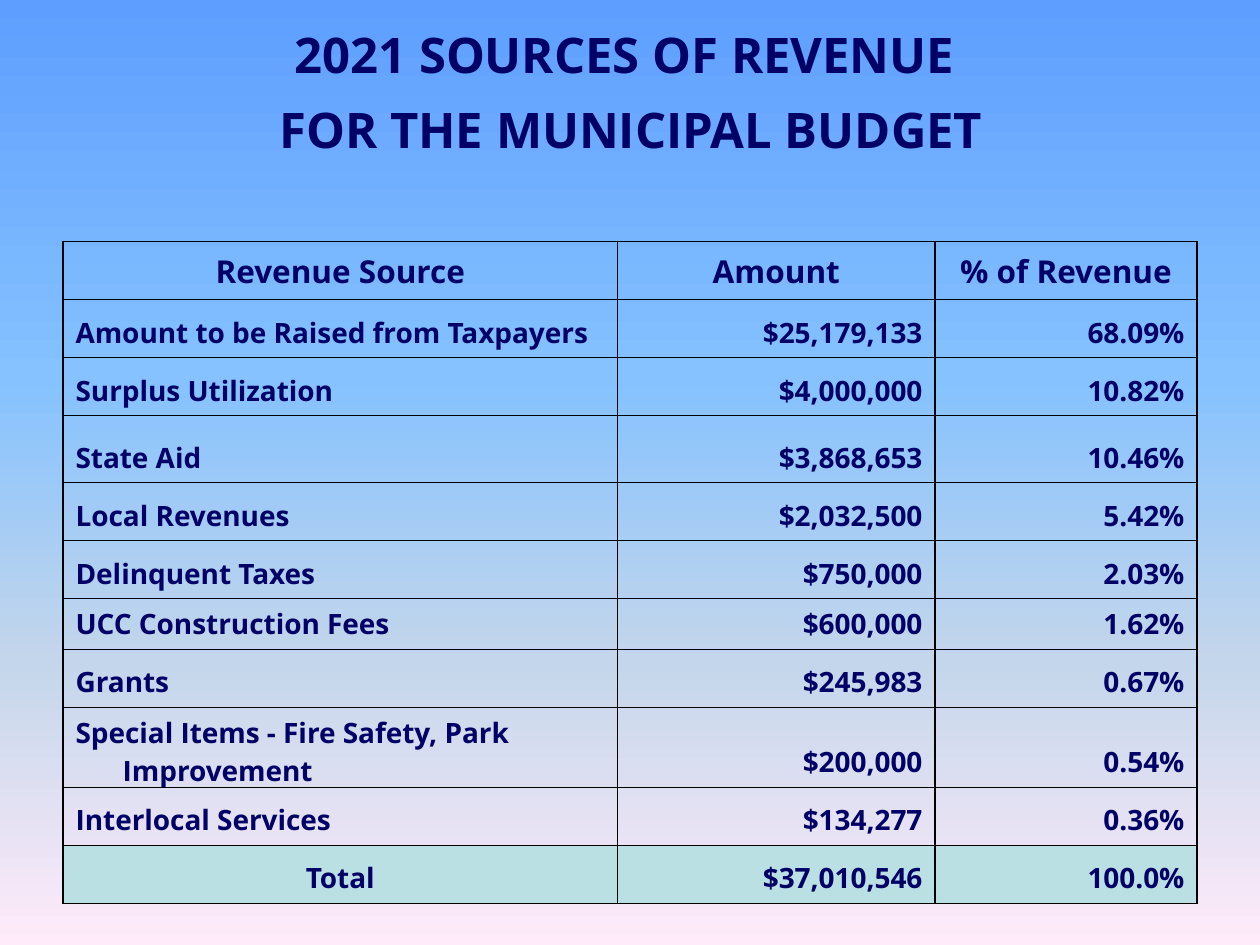
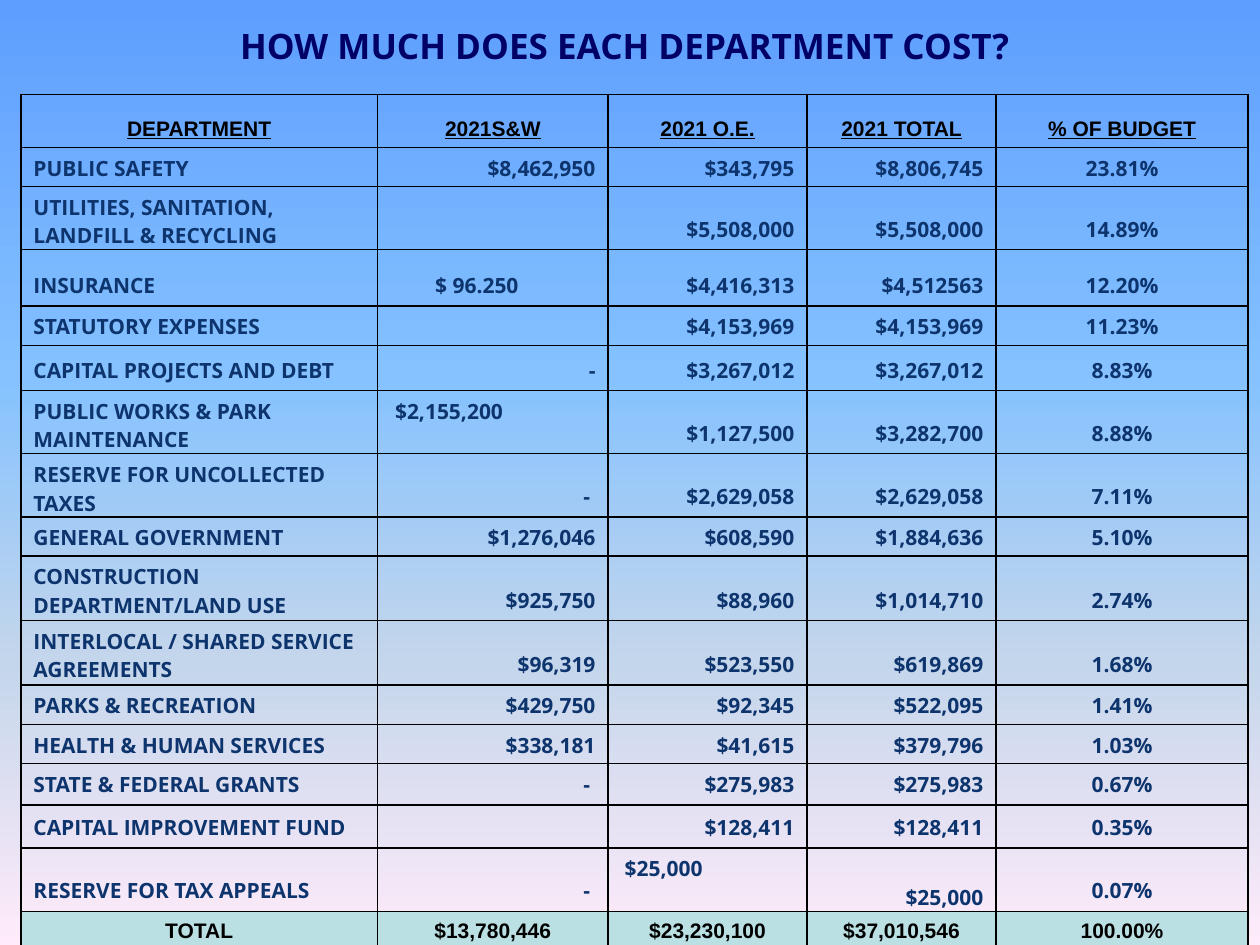
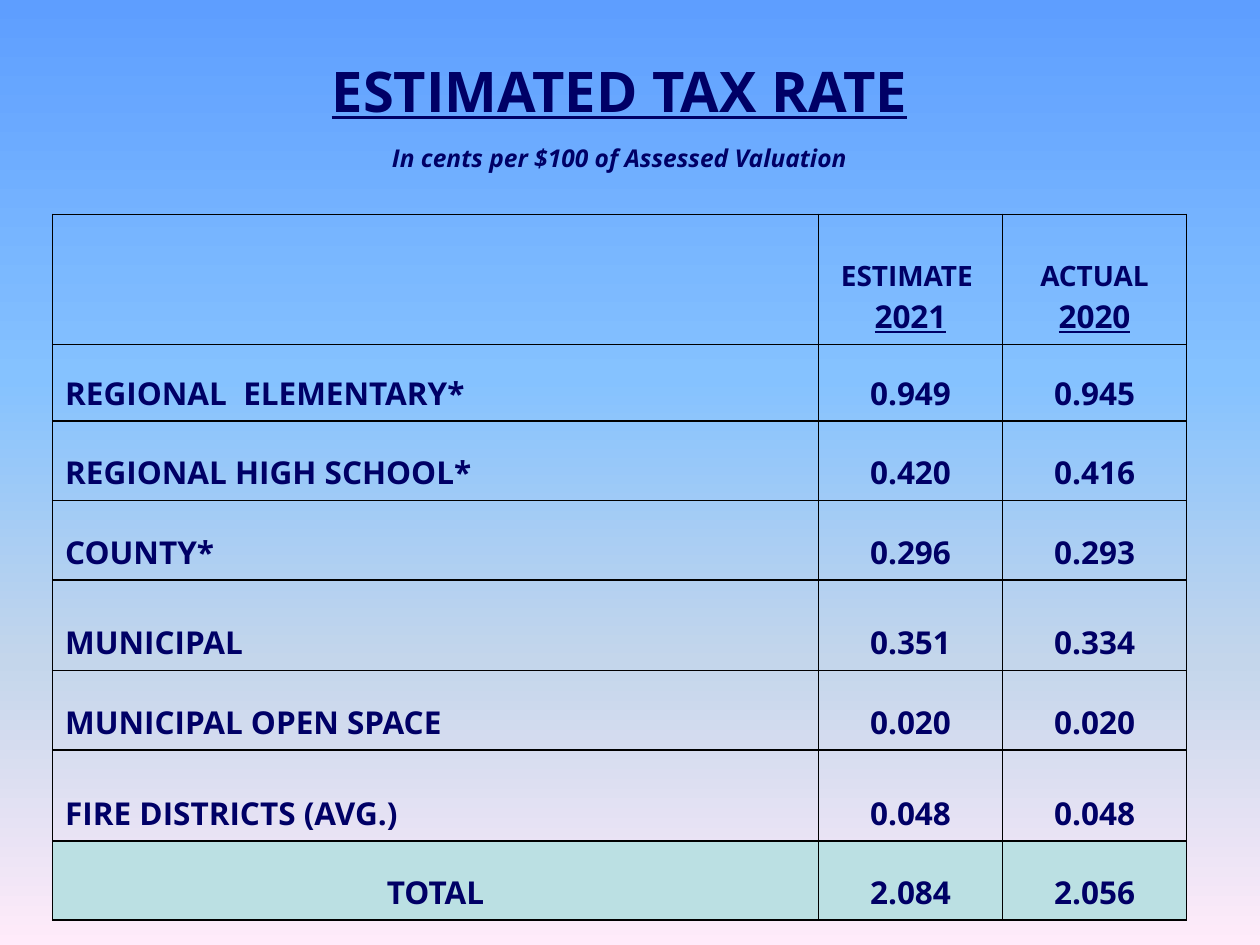
from dataclasses import dataclass, field

from pptx import Presentation
from pptx.dml.color import RGBColor
from pptx.enum.text import MSO_ANCHOR, MSO_AUTO_SIZE, PP_ALIGN
from pptx.oxml import parse_xml
from pptx.oxml.ns import nsdecls, qn
from pptx.oxml.xmlchemy import OxmlElement
from pptx.util import Cm, Pt

COLORS = {
    "navy": "000066",
    "denim": "0D346D",
    "black": "000000",
    "total": "BBE0E3",
}
SKY = ((0, "5E9EFF"), (40, "85C2FF"), (70, "C4D6EB"), (100, "FFEBFA"))
EDGES = ("lnL", "lnR", "lnT", "lnB")
HANGING = 0.95
LEFT, CENTER, RIGHT = PP_ALIGN.LEFT, PP_ALIGN.CENTER, PP_ALIGN.RIGHT


@dataclass(frozen=True)
class Style:
    size: int
    color: str = "navy"
    font: str = "Open Sans"
    underline: bool = False
    italic: bool = False


@dataclass(frozen=True)
class Placement:
    align: PP_ALIGN = RIGHT
    anchor: MSO_ANCHOR = MSO_ANCHOR.BOTTOM
    indent: float = 0
    bottom: float = 0.13


@dataclass(frozen=True)
class Heading:
    lines: tuple[str, ...]
    style: Style
    left: float
    top: float
    width: float
    height: float


@dataclass(frozen=True)
class Sheet:
    left: float
    top: float
    columns: tuple[float, ...]
    heights: tuple[float, ...]
    header: tuple
    rows: tuple[tuple[str, ...], ...]
    total: tuple[str, ...]
    header_style: Style
    body_style: Style
    total_style: Style
    aligns: tuple[PP_ALIGN, ...]
    total_aligns: tuple[PP_ALIGN, ...]
    hanging: float = 0
    captions: tuple[tuple[str, Style, MSO_ANCHOR], ...] = ()
    exceptions: dict[tuple[str, int], Placement] = field(default_factory=dict)


REVENUE_BODY = Style(16)
DEPARTMENT_TOTAL = Style(12, "black", "Arial")
RATE_BODY = Style(18)
RATE_KIND, RATE_YEAR = Style(16), Style(18, underline=True)

REVENUE_HEADING = Heading(
    ("2021 SOURCES OF REVENUE ", "FOR THE MUNICIPAL BUDGET"), Style(28), 1.07, 0.36, 23.29, 3.23
)
REVENUE = Sheet(
    left=1.27,
    top=4.87,
    columns=(11.18, 6.4, 5.28),
    heights=(1.17,) * 3 + (1.35,) + (1.17,) * 2 + (1.02,) + (1.17,) * 4,
    header=("Revenue Source", "Amount", "% of Revenue"),
    rows=(
        ("Amount to be Raised from Taxpayers", "$25,179,133", "68.09%"),
        ("Surplus Utilization", "$4,000,000", "10.82%"),
        ("State Aid", "$3,868,653", "10.46%"),
        ("Local Revenues", "$2,032,500", "5.42%"),
        ("Delinquent Taxes", "$750,000", "2.03%"),
        ("UCC Construction Fees", "$600,000", "1.62%"),
        ("Grants", "$245,983", "0.67%"),
        ("Special Items - Fire Safety, Park Improvement", "$200,000", "0.54%"),
        ("Interlocal Services", "$134,277", "0.36%"),
    ),
    total=("Total", "$37,010,546", "100.0%"),
    header_style=Style(18),
    body_style=REVENUE_BODY,
    total_style=REVENUE_BODY,
    aligns=(LEFT, RIGHT, RIGHT),
    total_aligns=(CENTER, RIGHT, RIGHT),
    hanging=HANGING,
)

DEPARTMENT_HEADING = Heading(
    ("HOW MUCH DOES EACH DEPARTMENT COST?",), Style(20), 1.7, 0.36, 21.79, 1.09
)
DEPARTMENTS = Sheet(
    left=0.42,
    top=1.9,
    columns=(7.19, 4.65, 4.01, 3.81, 5.08),
    heights=(1.07, 0.79, 0.84, 1.14, 0.79, 0.91, 1.07, 0.79, 0.79,
             1.3, 1.3, 0.79, 0.79, 0.84, 0.86, 1.28, 0.71),
    header=("DEPARTMENT", "2021S&W", "2021 O.E.", "2021 TOTAL", "% OF BUDGET"),
    rows=(
        ("PUBLIC SAFETY", "$8,462,950", "$343,795", "$8,806,745", "23.81%"),
        ("UTILITIES, SANITATION, LANDFILL & RECYCLING", "", "$5,508,000", "$5,508,000", "14.89%"),
        ("INSURANCE", "$ 96.250", "$4,416,313", "$4,512563", "12.20%"),
        ("STATUTORY EXPENSES", "", "$4,153,969", "$4,153,969", "11.23%"),
        ("CAPITAL PROJECTS AND DEBT", "-", "$3,267,012", "$3,267,012", "8.83%"),
        ("PUBLIC WORKS & PARK MAINTENANCE", "$2,155,200", "$1,127,500", "$3,282,700", "8.88%"),
        ("RESERVE FOR UNCOLLECTED TAXES", "- ", "$2,629,058", "$2,629,058", "7.11%"),
        ("GENERAL GOVERNMENT", "$1,276,046", "$608,590", "$1,884,636", "5.10%"),
        ("CONSTRUCTION DEPARTMENT/LAND USE", "$925,750", "$88,960", "$1,014,710", "2.74%"),
        ("INTERLOCAL / SHARED SERVICE AGREEMENTS", "$96,319", "$523,550", "$619,869", "1.68%"),
        ("PARKS & RECREATION", "$429,750", "$92,345", "$522,095", "1.41%"),
        ("HEALTH & HUMAN SERVICES", "$338,181", "$41,615", "$379,796", "1.03%"),
        ("STATE & FEDERAL GRANTS", "- ", "$275,983", "$275,983", "0.67%"),
        ("CAPITAL IMPROVEMENT FUND", "", "$128,411", "$128,411", "0.35%"),
        ("RESERVE FOR TAX APPEALS", "- ", "$25,000", "$25,000", "0.07%"),
    ),
    total=("TOTAL", "$13,780,446", "$23,230,100", "$37,010,546", "100.00%"),
    header_style=Style(12, "black", "Arial", underline=True),
    body_style=Style(12, "denim"),
    total_style=DEPARTMENT_TOTAL,
    aligns=(LEFT, RIGHT, RIGHT, RIGHT, CENTER),
    total_aligns=(CENTER,) * 5,
    exceptions={
        ("INSURANCE", 1): Placement(LEFT, indent=0.91),
        ("PUBLIC WORKS & PARK MAINTENANCE", 1): Placement(LEFT, MSO_ANCHOR.TOP, 0.1),
        ("RESERVE FOR TAX APPEALS", 2): Placement(LEFT, MSO_ANCHOR.TOP, 0.08),
        ("RESERVE FOR TAX APPEALS", 3): Placement(bottom=0),
    },
)

TAX_RATES = Sheet(
    left=1.06,
    top=0,
    columns=(15.44, 3.71, 3.71),
    heights=(2.72, 1.6, 2.62, 1.55, 1.6, 1.6, 1.83, 1.6, 1.83, 1.6),
    header=(
        "",
        (("ESTIMATE ", RATE_KIND), ("2021", RATE_YEAR)),
        (("ACTUAL", RATE_KIND), ("2020", RATE_YEAR)),
    ),
    rows=(
        ("REGIONAL  ELEMENTARY*", "0.949", "0.945"),
        ("REGIONAL HIGH SCHOOL*", "0.420", "0.416"),
        ("COUNTY*", "0.296", "0.293"),
        ("MUNICIPAL", "0.351", "0.334"),
        ("MUNICIPAL OPEN SPACE", "0.020", "0.020"),
        ("FIRE DISTRICTS (AVG.)", "0.048", "0.048"),
    ),
    total=("TOTAL", "2.084", "2.056"),
    header_style=RATE_BODY,
    body_style=RATE_BODY,
    total_style=RATE_BODY,
    aligns=(LEFT, CENTER, CENTER),
    total_aligns=(CENTER,) * 3,
    hanging=HANGING,
    captions=(
        ("ESTIMATED TAX RATE", Style(32, underline=True), MSO_ANCHOR.BOTTOM),
        ("In cents per $100 of Assessed Valuation", Style(14, italic=True), MSO_ANCHOR.TOP),
    ),
)


def paint_sky(master) -> None:
    fill = master.background.fill
    fill.gradient()
    fill.gradient_angle = 270
    stops = master.element.find(".//" + qn("a:gsLst"))
    for stop in list(stops):
        stops.remove(stop)
    for percent, color in SKY:
        stops.append(parse_xml(
            f'<a:gs {nsdecls("a")} pos="{percent * 1000}"><a:srgbClr val="{color}"/></a:gs>'
        ))


def apply_style(paragraph, style: Style) -> None:
    font = paragraph.font
    font.name = style.font
    font.size = Pt(style.size)
    font.bold = True
    font.underline = style.underline
    font.italic = style.italic
    font.color.rgb = RGBColor.from_string(COLORS[style.color])


def set_indent(paragraph, left: float, first: float) -> None:
    properties = paragraph._p.get_or_add_pPr()
    properties.set("marL", str(Cm(left)))
    properties.set("indent", str(Cm(first)))


def draw_borders(cell, visible: tuple[str, ...] = EDGES) -> None:
    properties = cell._tc.get_or_add_tcPr()
    for edge in EDGES:
        line = OxmlElement(f"a:{edge}")
        line.set("w", str(Pt(1)))
        if edge in visible:
            line.append(parse_xml(
                f'<a:solidFill {nsdecls("a")}><a:srgbClr val="{COLORS["black"]}"/></a:solidFill>'
            ))
        else:
            line.append(OxmlElement("a:noFill"))
        properties.append(line)


def fill_cell(cell, content, style: Style, placement: Placement, hanging: float) -> None:
    lines = ((content, style),) if isinstance(content, str) else content
    cell.vertical_anchor = placement.anchor
    cell.margin_bottom = Cm(placement.bottom)
    cell.text_frame.text = "\n".join(text for text, _ in lines)
    for paragraph, (_, line_style) in zip(cell.text_frame.paragraphs, lines):
        paragraph.alignment = placement.align
        apply_style(paragraph, line_style)
        if hanging:
            set_indent(paragraph, hanging, -hanging)
        elif placement.indent:
            set_indent(paragraph, placement.indent, 0)


def draw_captions(table, sheet: Sheet) -> None:
    for index, (text, style, anchor) in enumerate(sheet.captions):
        is_last = index == len(sheet.captions) - 1
        cells = list(table.rows[index].cells)
        cells[0].merge(cells[-1])
        for cell in cells:
            draw_borders(cell, ("lnB",) if is_last else ())
            cell.fill.background()
        fill_cell(cells[0], text, style, Placement(CENTER, anchor), sheet.hanging)


def draw_sheet(slide, sheet: Sheet) -> None:
    table = slide.shapes.add_table(
        len(sheet.heights), len(sheet.columns), Cm(sheet.left), Cm(sheet.top),
        Cm(sum(sheet.columns)), Cm(sum(sheet.heights)),
    ).table
    table.first_row = table.horz_banding = False
    for column, width in zip(table.columns, sheet.columns):
        column.width = Cm(width)
    for row, height in zip(table.rows, sheet.heights):
        row.height = Cm(height)
    draw_captions(table, sheet)

    entries = [(sheet.header, sheet.header_style, (CENTER,) * len(sheet.columns))]
    entries += [(row, sheet.body_style, sheet.aligns) for row in sheet.rows]
    entries.append((sheet.total, sheet.total_style, sheet.total_aligns))
    for row_index, (contents, style, aligns) in enumerate(entries, len(sheet.captions)):
        for column_index, (content, align) in enumerate(zip(contents, aligns)):
            cell = table.cell(row_index, column_index)
            draw_borders(cell)
            if contents is sheet.total:
                cell.fill.solid()
                cell.fill.fore_color.rgb = RGBColor.from_string(COLORS["total"])
            else:
                cell.fill.background()
            placement = sheet.exceptions.get((contents[0], column_index), Placement(align))
            fill_cell(cell, content, style, placement, sheet.hanging)


def draw_heading(slide, heading: Heading) -> None:
    frame = slide.shapes.add_textbox(
        Cm(heading.left), Cm(heading.top), Cm(heading.width), Cm(heading.height)
    ).text_frame
    frame.word_wrap = True
    frame.auto_size = MSO_AUTO_SIZE.SHAPE_TO_FIT_TEXT
    frame.text = "\n".join(heading.lines)
    for index, paragraph in enumerate(frame.paragraphs):
        paragraph.alignment = CENTER
        apply_style(paragraph, heading.style)
        if index:
            paragraph.space_before = Cm(0.33)


def main() -> None:
    deck = Presentation()
    deck.slide_width, deck.slide_height = Cm(25.4), Cm(19.05)
    paint_sky(deck.slide_master)
    blank = deck.slide_layouts[6]
    for heading, sheet in (
        (REVENUE_HEADING, REVENUE),
        (DEPARTMENT_HEADING, DEPARTMENTS),
        (None, TAX_RATES),
    ):
        slide = deck.slides.add_slide(blank)
        if heading:
            draw_heading(slide, heading)
        draw_sheet(slide, sheet)
    deck.save("out.pptx")


if __name__ == "__main__":
    main()
